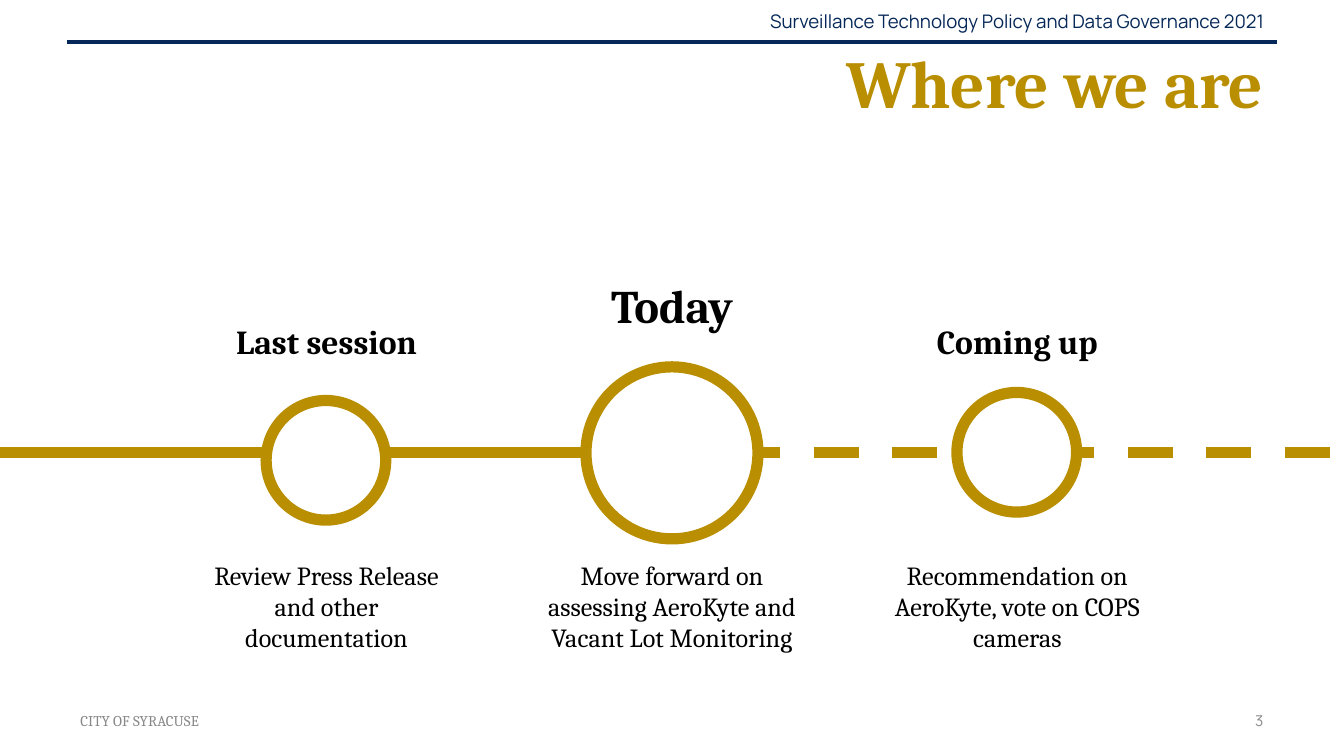
from pptx import Presentation
from pptx.dml.color import RGBColor
from pptx.enum import dml, shapes, text
from pptx.oxml.ns import qn
from pptx.util import Inches, Pt
from lxml import etree

GOLD = RGBColor(0xB9, 0x8E, 0x00)
NAVY = RGBColor(0x06, 0x28, 0x58)
GREY = RGBColor(0x88, 0x88, 0x88)
BLACK = RGBColor(0, 0, 0)
WHITE = RGBColor(255, 255, 255)
SERIF, SANS = "Cambria", "Manrope"
LEFT, CENTER, RIGHT = text.PP_ALIGN.LEFT, text.PP_ALIGN.CENTER, text.PP_ALIGN.RIGHT
TOP, MIDDLE = text.MSO_ANCHOR.TOP, text.MSO_ANCHOR.MIDDLE

AXIS_Y = 3.37
LABEL_W = 2.12

# Label left, heading, heading top, size, circle left, top, diameter, description
STEPS = [
    (1.37, "Last session", 2.29, 18, 1.98, 2.98, 0.89,
     "Review Press Release and other documentation"),
    (3.94, "Today", 1.96, 25, 4.36, 2.73, 1.28,
     "Move forward on assessing AeroKyte and Vacant Lot Monitoring"),
    (6.51, "Coming up", 2.29, 18, 7.12, 2.92, 0.89,
     "Recommendation on AeroKyte, vote on COPS cameras"),
]


def write(sp, content, size, color, font=SERIF, bold=False, align=LEFT,
          anchor=MIDDLE, pad=0.05):
    tf = sp.text_frame
    tf.word_wrap = True
    tf.auto_size = text.MSO_AUTO_SIZE.NONE
    tf.vertical_anchor = anchor
    tf.margin_left = tf.margin_right = Inches(0.1)
    tf.margin_top = tf.margin_bottom = Inches(pad)
    p = tf.paragraphs[0]
    p.alignment = align
    r = p.add_run()
    r.text = content
    r.font.name, r.font.size, r.font.bold = font, Pt(size), bold
    r.font.color.rgb = color


def add_text(s, x, y, w, h, content, size, color, **fmt):
    sp = s.shapes.add_textbox(Inches(x), Inches(y), Inches(w), Inches(h))
    write(sp, content, size, color, **fmt)


def add_line(s, x1, x2, y, color, width, dash=None):
    line = s.shapes.add_connector(shapes.MSO_CONNECTOR.STRAIGHT, Inches(x1),
                                  Inches(y), Inches(x2), Inches(y))
    line.line.color.rgb = color
    line.line.width = Pt(width)
    if dash:
        line.line.dash_style = dash
    etree.SubElement(line._element.spPr, qn("a:effectLst"))


def add_circle(s, x, y, d):
    sp = s.shapes.add_shape(shapes.MSO_SHAPE.OVAL, Inches(x), Inches(y),
                            Inches(d), Inches(d))
    sp.shadow.inherit = False
    sp.fill.solid()
    sp.fill.fore_color.rgb = WHITE
    sp.line.color.rgb = GOLD
    sp.line.width = Pt(6)


def add_title(s, content):
    sp = s.shapes.title
    sp.left, sp.top, sp.width, sp.height = map(Inches, (5, 0.29, 4.5, 0.64))
    write(sp, content, 36, GOLD, bold=True, align=RIGHT)


def add_step(s, x, heading, y, size, cx, cy, d, description):
    add_circle(s, cx, cy, d)
    label = dict(align=CENTER, anchor=TOP, pad=0.1)
    add_text(s, x, y, LABEL_W, 0.5, heading, size, BLACK, bold=True, **label)
    add_text(s, x, 4.06, LABEL_W, 0.91, description, 14, BLACK, **label)


def main():
    prs = Presentation()
    # Widescreen, 16:9
    prs.slide_width, prs.slide_height = Inches(10), Inches(10 * 9 / 16)
    s = prs.slides.add_slide(prs.slide_layouts[5])

    # Header, title and footer
    add_text(s, 5.21, 0.01, 4.29, 0.3,
             "Surveillance Technology Policy and Data Governance 2021",
             10, NAVY, font=SANS, align=RIGHT)
    add_line(s, 0.5, 9.5, 0.31, NAVY, 2.25)
    add_title(s, "Where we are")
    add_text(s, 0.5, 5.21, 2.33, 0.3, "CITY OF SYRACUSE", 8, GREY)
    add_text(s, 7.17, 5.21, 2.33, 0.3, "3", 8, GREY, font=SANS, align=RIGHT)

    # Timeline: solid for the past, dashed for the future
    add_line(s, 0, 4.36, AXIS_Y, GOLD, 6)
    add_line(s, 5.47, 10, AXIS_Y, GOLD, 6, dash=dml.MSO_LINE.DASH)
    for step in STEPS:
        add_step(s, *step)

    prs.save("out.pptx")


if __name__ == "__main__":
    main()
